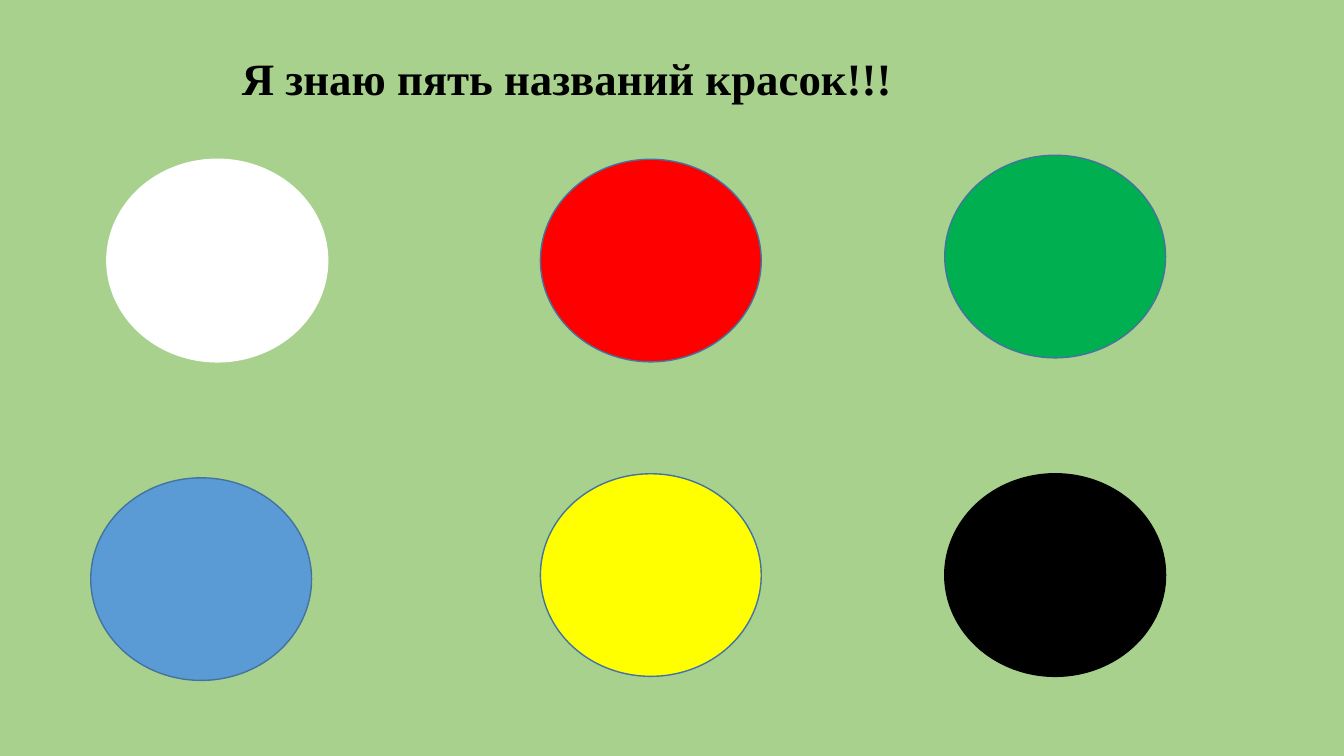
import pptx
import pptx.dml.color
import pptx.enum.shapes
import pptx.enum.text
import pptx.util

SLIDE_W, SLIDE_H = 13.33, 7.5
CIRCLE_W, CIRCLE_H = 2.19, 2.01
COLORS = {
    "background": "A9D18E",
    "text": "000000",
    "outline": "43739E",
    "white": "FFFFFF",
    "red": "FF0000",
    "green": "00B050",
    "blue": "5B9BD5",
    "yellow": "FFFF00",
    "black": "000000",
}
# paint, left, top, outline
PAINTS = [
    ("white", 1.06, 1.58, "white"),
    ("red", 5.36, 1.58, "outline"),
    ("green", 9.37, 1.54, "outline"),
    ("blue", 0.9, 4.74, "outline"),
    ("yellow", 5.36, 4.7, "outline"),
    ("black", 9.37, 4.7, "black"),
]


def rgb(name):
    return pptx.dml.color.RGBColor.from_string(COLORS[name])


def inches(*lengths):
    return [pptx.util.Inches(length) for length in lengths]


def add_title(slide, box, text):
    tf = slide.shapes.add_textbox(*inches(*box)).text_frame
    tf.word_wrap = True
    tf.auto_size = pptx.enum.text.MSO_AUTO_SIZE.SHAPE_TO_FIT_TEXT
    r = tf.paragraphs[0].add_run()
    r.text = text
    r.font.name = "Times New Roman"
    r.font.size = pptx.util.Pt(32)
    r.font.bold = True
    r.font.color.rgb = rgb("text")


def add_paint(slide, box, fill, line):
    sp = slide.shapes.add_shape(
        pptx.enum.shapes.MSO_SHAPE.OVAL, *inches(*box))
    sp.shadow.inherit = False
    sp.fill.solid()
    sp.fill.fore_color.rgb = rgb(fill)
    sp.line.color.rgb = rgb(line)
    sp.line.width = pptx.util.Pt(1)


def main():
    prs = pptx.Presentation()
    prs.slide_width, prs.slide_height = inches(SLIDE_W, SLIDE_H)
    slide = prs.slides.add_slide(prs.slide_layouts[6])
    slide.background.fill.solid()
    slide.background.fill.fore_color.rgb = rgb("background")
    add_title(slide, (2.3, 0.45, 8.54, 0.64), "Я знаю пять названий красок!!!")
    for paint, left, top, line in PAINTS:
        add_paint(slide, (left, top, CIRCLE_W, CIRCLE_H), paint, line)
    prs.save("out.pptx")


if __name__ == "__main__":
    main()
